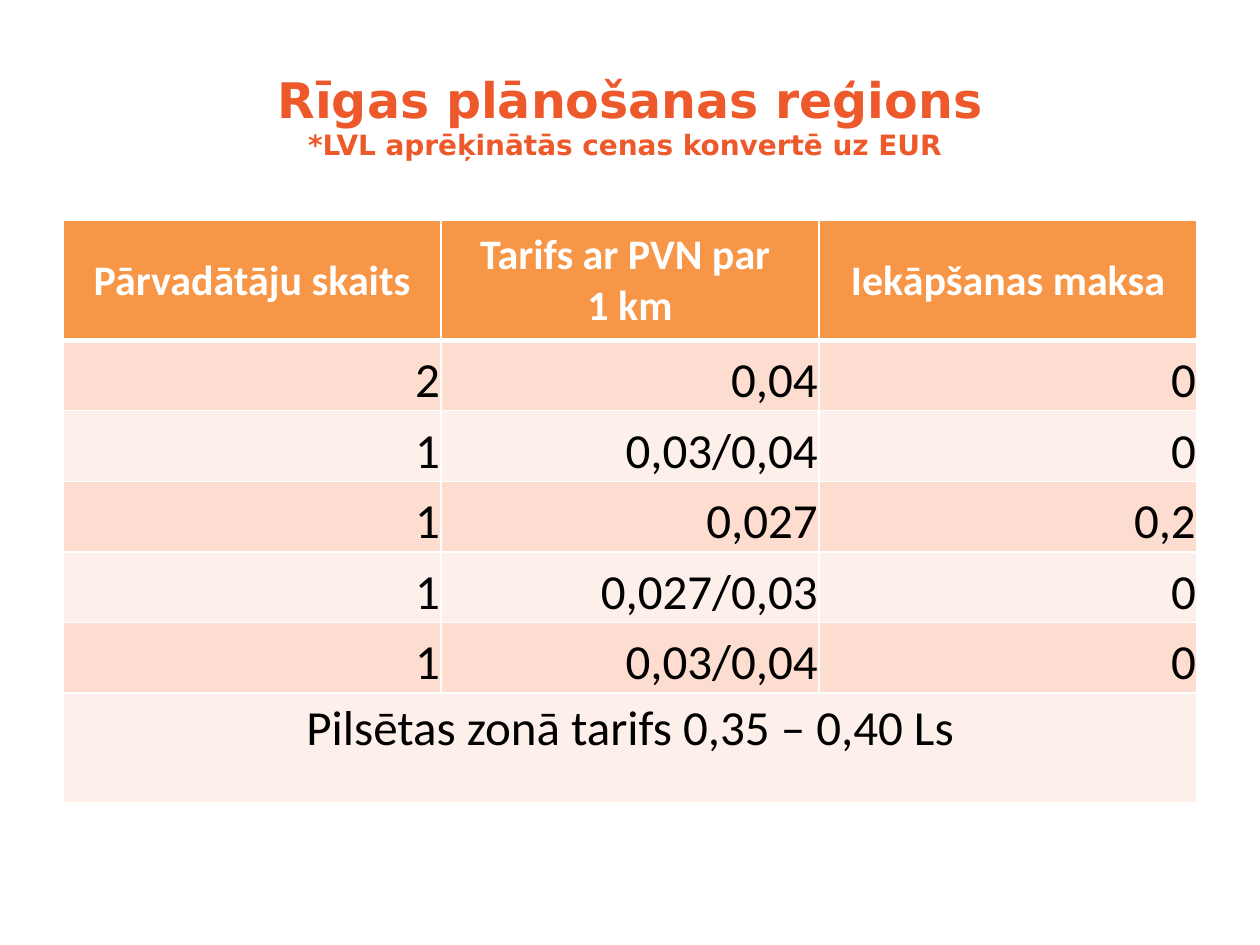
"""Build a slide with a table of transport tariffs in the Riga planning region."""
import pptx
import pptx.dml.color
import pptx.enum.text
import pptx.oxml
import pptx.oxml.ns
import pptx.util

COLORS = {
    "title": "ED592A",
    "header": "F79646",
    "odd": "FCDDCF",
    "even": "FDEFE9",
    "white": "FFFFFF",
    "black": "000000",
}
ALIGN = pptx.enum.text.PP_ALIGN
ANCHOR = pptx.enum.text.MSO_ANCHOR


def write_text(paragraph, text, size, color, font="Calibri", bold=False, align=ALIGN.CENTER, after=0):
    paragraph.alignment = align
    paragraph.space_after = pptx.util.Pt(after)
    for index, line in enumerate(text.split("\n")):
        if index:
            paragraph.add_line_break()
        if line:
            run = paragraph.add_run()
            run.text = line
            run.font.name = font
            run.font.size = pptx.util.Pt(size)
            run.font.bold = bold
            run.font.color.rgb = pptx.dml.color.RGBColor.from_string(COLORS[color])


def style_cell(cell, fill, bottom_width):
    properties = cell._tc.get_or_add_tcPr()
    for side, width in (("L", 1), ("R", 1), ("T", 1), ("B", bottom_width)):
        properties.append(pptx.oxml.parse_xml(
            f'<a:ln{side} {pptx.oxml.ns.nsdecls("a")} w="{pptx.util.Pt(width)}"><a:solidFill>'
            f'<a:srgbClr val="{COLORS["white"]}"/></a:solidFill></a:ln{side}>'))
    cell.fill.solid()
    cell.fill.fore_color.rgb = pptx.dml.color.RGBColor.from_string(COLORS[fill])


presentation = pptx.Presentation()
presentation.slide_width = pptx.util.Inches(10)
presentation.slide_height = pptx.util.Inches(7.5)
slide = presentation.slides.add_slide(presentation.slide_layouts[6])

margin = pptx.util.Inches(0.5)
column_width = (presentation.slide_width - 2 * margin) // 3
row_heights = [pptx.util.Inches(height) for height in [0.95] + [0.56] * 5 + [0.87]]

title = slide.shapes.add_textbox(
    margin, pptx.util.Inches(0.29), 3 * column_width, pptx.util.Inches(1.25))
title.text_frame.word_wrap = True
title.text_frame.vertical_anchor = ANCHOR.MIDDLE
heading = title.text_frame.paragraphs[0]
for text, size in (("Rīgas plānošanas reģions\n", 28), ("*LVL aprēķinātās cenas konvertē uz EUR ", 16)):
    write_text(heading, text, size, "title", font="DejaVu Sans", bold=True)

rows = [
    ("Pārvadātāju skaits", "Tarifs ar PVN par \n1 km", "Iekāpšanas maksa"),
    ("2", "0,04", "0"),
    ("1", "0,03/0,04", "0"),
    ("1", "0,027", "0,2"),
    ("1", "0,027/0,03", "0"),
    ("1", "0,03/0,04", "0"),
    ("Pilsētas zonā tarifs 0,35 – 0,40 Ls", "", ""),
]
last = len(rows) - 1
table = slide.shapes.add_table(
    len(rows), 3, margin, pptx.util.Inches(1.75), 3 * column_width, sum(row_heights)).table
for column in table.columns:
    column.width = column_width

for row_index, texts in enumerate(rows):
    table.rows[row_index].height = row_heights[row_index]
    for column_index, text in enumerate(texts):
        cell = table.cell(row_index, column_index)
        paragraph = cell.text_frame.paragraphs[0]
        if row_index < last:
            cell.margin_left = cell.margin_right = cell.margin_top = pptx.util.Inches(0.01)
            cell.margin_bottom = 0
        if row_index == 0:
            style_cell(cell, "header", 3)
            cell.vertical_anchor = ANCHOR.MIDDLE
            write_text(paragraph, text, 24, "white", bold=True)
        elif row_index < last:
            style_cell(cell, "odd" if row_index % 2 else "even", 1)
            cell.vertical_anchor = ANCHOR.BOTTOM
            write_text(paragraph, text, 28, "black", align=ALIGN.RIGHT, after=12)
        else:
            style_cell(cell, "even", 1)
            write_text(paragraph, text, 28, "black")
table.cell(last, 0).merge(table.cell(last, 2))

presentation.save("out.pptx")
